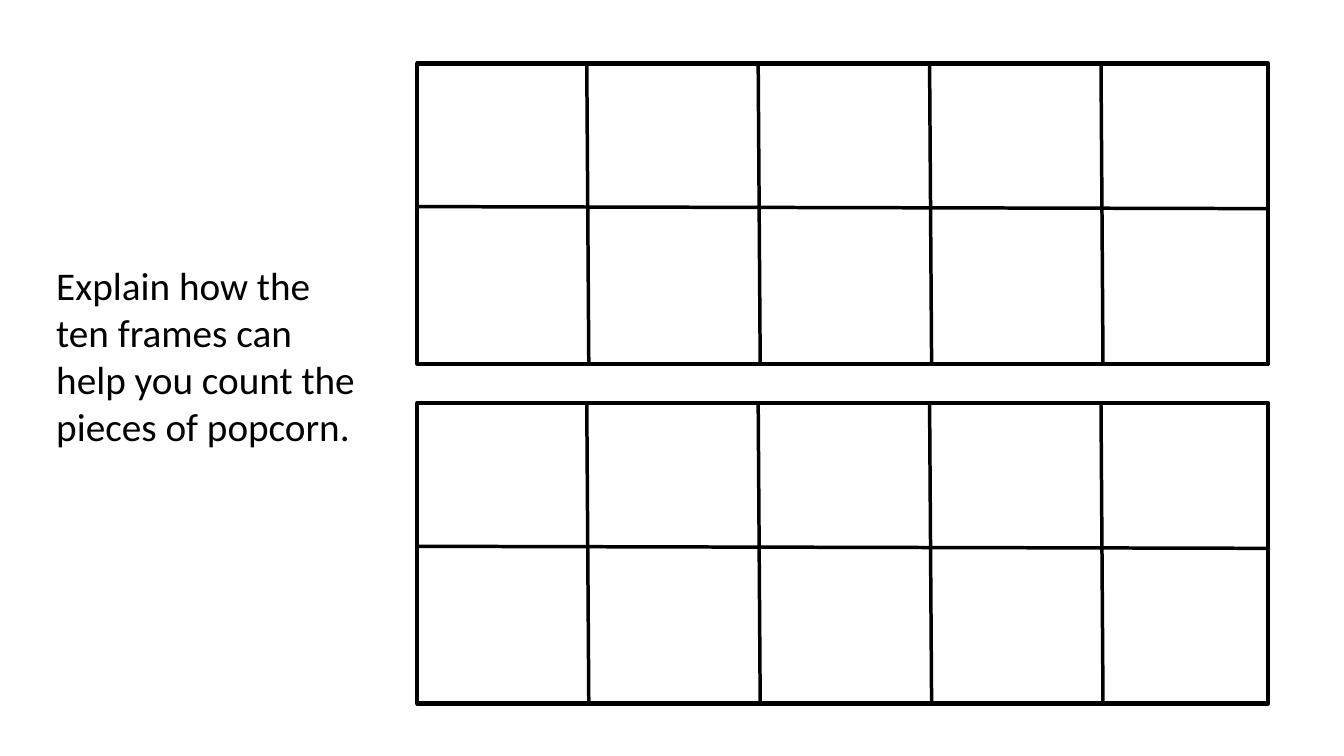
from lxml import etree
from pptx import Presentation
from pptx import util as u
from pptx.dml.color import RGBColor
from pptx.enum import shapes, text
from pptx.oxml.ns import qn

BLACK = RGBColor(0x00, 0x00, 0x00)
FONT = "Calibri"
FRAME_LEFT, FRAME_WIDTH, FRAME_HEIGHT = 4.14, 8.44, 2.98
FRAME_TOPS = (0.63, 4.0)
ROW_DIVIDER_OFFSET = 1.42
FIRST_COLUMN, COLUMN_STEP, COLUMNS = 1.68, 1.7, 5
SLANT = 0.02


def add_text(slide, wording, left, top, width, height, size=28, color=BLACK, font=FONT):
    """Add a wrapped, left-aligned text box."""
    box = slide.shapes.add_textbox(*map(u.Inches, (left, top, width, height)))
    frame = box.text_frame
    frame.word_wrap = True
    frame.auto_size = text.MSO_AUTO_SIZE.SHAPE_TO_FIT_TEXT
    run = frame.paragraphs[0].add_run()
    run.text = wording
    run.font.size = u.Pt(size)
    run.font.name = font
    run.font.color.rgb = color


def add_divider(group, x1, y1, x2, y2):
    """Draw one inner line of a ten frame."""
    divider = group.shapes.add_connector(
        shapes.MSO_CONNECTOR.STRAIGHT, *map(u.Inches, (x1, y1, x2, y2)))
    divider.line.color.rgb = BLACK
    divider.line.width = u.Pt(2.5)
    etree.SubElement(divider._element.spPr, qn("a:effectLst"))


def add_ten_frame(slide, left, top, width, height):
    """Draw a grouped ten frame of two rows and five columns."""
    group = slide.shapes.add_group_shape()
    border = group.shapes.add_shape(
        shapes.MSO_SHAPE.RECTANGLE, *map(u.Inches, (left, top, width, height)))
    border.shadow.inherit = False
    border.fill.background()
    border.line.color.rgb = BLACK
    border.line.width = u.Pt(3)

    row_y = top + ROW_DIVIDER_OFFSET
    add_divider(group, left, row_y, left + width, row_y + SLANT)
    for column in range(COLUMNS - 1):
        column_x = left + FIRST_COLUMN + column * COLUMN_STEP
        add_divider(group, column_x, top, column_x + SLANT, top + height)


def main():
    """Build and save the ten frames slide."""
    deck = Presentation()
    deck.slide_width, deck.slide_height = u.Inches(13.33), u.Inches(7.5)
    slide = deck.slides.add_slide(deck.slide_layouts[6])
    add_text(slide, "Explain how the ten frames can help you count the pieces of popcorn.",
             0.46, 2.54, 3.26, 1.99)
    for top in FRAME_TOPS:
        add_ten_frame(slide, FRAME_LEFT, top, FRAME_WIDTH, FRAME_HEIGHT)
    deck.save("out.pptx")


if __name__ == "__main__":
    main()
